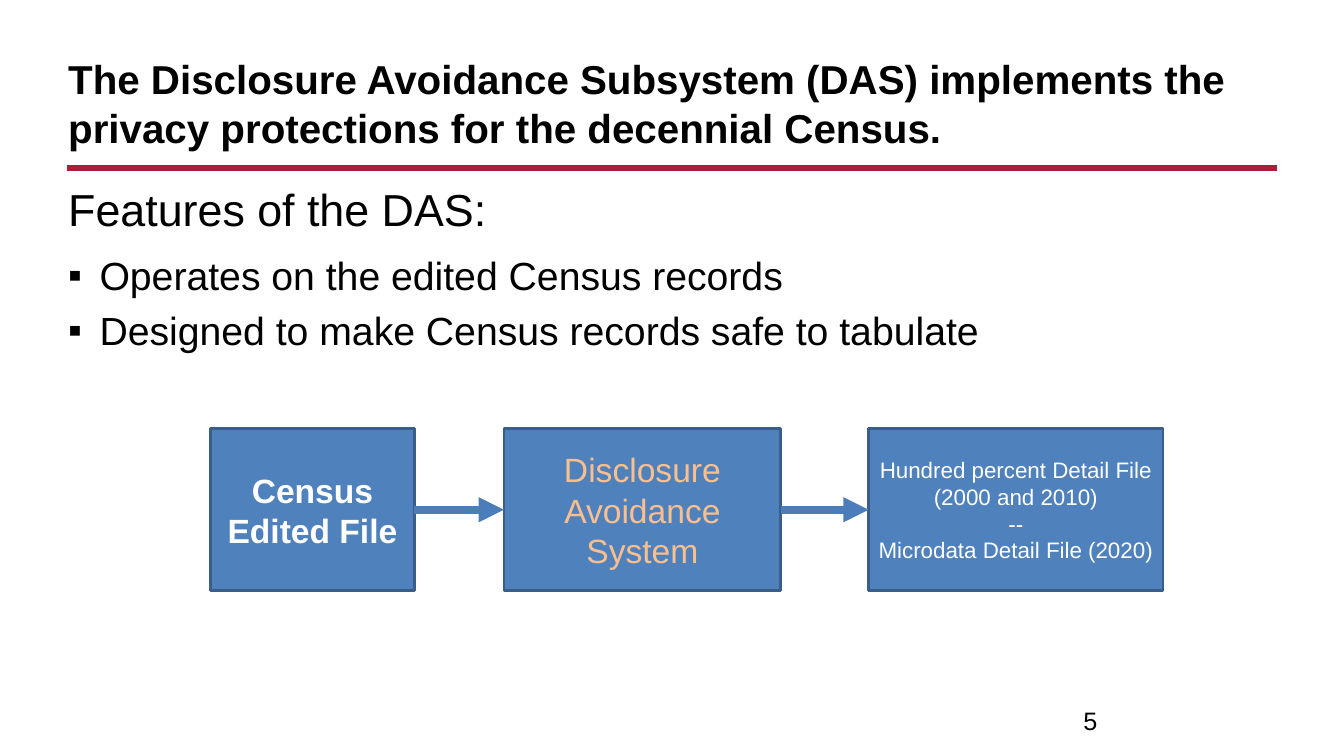
from lxml import etree
from pptx import Presentation
from pptx.dml.color import RGBColor
from pptx.enum.shapes import MSO_CONNECTOR, MSO_SHAPE
from pptx.enum.text import MSO_ANCHOR, PP_ALIGN
from pptx.oxml.ns import qn
from pptx.util import Cm, Pt

BLACK = RGBColor(0x00, 0x00, 0x00)
WHITE = RGBColor(0xFF, 0xFF, 0xFF)
PEACH = RGBColor(0xFA, 0xBF, 0x8E)
CRIMSON = RGBColor(0xA9, 0x20, 0x3D)
BOX_BLUE = RGBColor(0x4F, 0x81, 0xBD)
BORDER_BLUE = RGBColor(0x39, 0x5E, 0x89)
ARROW_BLUE = RGBColor(0x4A, 0x7D, 0xBA)
STRAIGHT = MSO_CONNECTOR.STRAIGHT
RECTANGLE = MSO_SHAPE.RECTANGLE
TOP, MIDDLE, BOTTOM = MSO_ANCHOR.TOP, MSO_ANCHOR.MIDDLE, MSO_ANCHOR.BOTTOM
CENTER = PP_ALIGN.CENTER
RIGHT_SIDE, LEFT_SIDE = 3, 1
FONT = "Arial"

FEATURES = [
    ("Operates on the edited Census records", 11.6),
    ("Designed to make Census records safe to tabulate", 5.6),
]
STAGES = [
    (0, 5.13, "Census Edited File", 24, WHITE, True),
    (7.39, 6.98, "Disclosure Avoidance System", 24, PEACH, False),
    (16.58, 7.42,
     "Hundred percent Detail File\n(2000 and 2010)\n--\nMicrodata Detail File (2020)",
     16, WHITE, False),
]


def style_font(font, size, color=BLACK, bold=False):
    """Set typeface, size, colour and weight of a font."""
    font.name = FONT
    font.size = Pt(size)
    font.bold = bold
    font.color.rgb = color


def add_text(slide, left, top, width, height, text, size, bold=False, anchor=TOP):
    """Add a wrapping text box and return its text frame."""
    box = slide.shapes.add_textbox(Cm(left), Cm(top), Cm(width), Cm(height))
    text_frame = box.text_frame
    text_frame.word_wrap = True
    text_frame.vertical_anchor = anchor
    text_frame.text = text
    style_font(text_frame.paragraphs[0].runs[0].font, size, bold=bold)
    return text_frame


def add_line(slide, start, end, color, width):
    """Add a straight line without shadow between two points in centimetres."""
    line = slide.shapes.add_connector(STRAIGHT, *map(Cm, start + end))
    line.line.color.rgb = color
    line.line.width = Pt(width)
    etree.SubElement(line._element.spPr, qn("a:effectLst"))
    return line


def add_header(slide, left, top, width, height):
    """Add the title with the crimson rule below it."""
    add_text(slide, left, top, width, height,
             "The Disclosure Avoidance Subsystem (DAS) implements the "
             "privacy protections for the decennial Census.", 28.8, True, BOTTOM)
    rule_top = top + height + 0.3
    add_line(slide, (left + 0.23, rule_top), (left + width + 0.03, rule_top), CRIMSON, 4.5)


def add_features(slide, left, top, width, height):
    """Add the lead line and its bulleted features."""
    text_frame = add_text(slide, left, top, width, height, "Features of the DAS:", 32)
    for feature, space_before in FEATURES:
        paragraph = text_frame.add_paragraph()
        paragraph.text = feature
        paragraph.level = 1
        paragraph.space_before = Pt(space_before)
        properties = paragraph._p.get_or_add_pPr()
        properties.set("marL", str(Cm(0.79)))
        properties.set("indent", str(-Cm(0.79)))
        etree.SubElement(properties, qn("a:buFont"), typeface=FONT)
        etree.SubElement(properties, qn("a:buChar"), char="▪")
        style_font(paragraph.runs[0].font, 28)


def add_stage(slide, left, top, width, height, text, size, color, bold):
    """Add one box of the flow."""
    box = slide.shapes.add_shape(RECTANGLE, Cm(left), Cm(top), Cm(width), Cm(height))
    box.shadow.inherit = False
    box.fill.solid()
    box.fill.fore_color.rgb = BOX_BLUE
    box.line.color.rgb = BORDER_BLUE
    box.line.width = Pt(2)
    text_frame = box.text_frame
    text_frame.word_wrap = True
    text_frame.vertical_anchor = MIDDLE
    text_frame.text = text
    for paragraph in text_frame.paragraphs:
        paragraph.alignment = CENTER
        style_font(paragraph.runs[0].font, size, color, bold)
    return box


def add_flow(slide, left, top, height):
    """Add the stages in a row and join neighbours with arrows."""
    boxes = [add_stage(slide, left + offset, top, width, height, *label)
             for offset, width, *label in STAGES]
    for source, target in zip(boxes, boxes[1:]):
        arrow = add_line(slide, (left, top), (left, top), ARROW_BLUE, 6)
        arrow.begin_connect(source, RIGHT_SIDE)
        arrow.end_connect(target, LEFT_SIDE)
        etree.SubElement(arrow.line._get_or_add_ln(), qn("a:tailEnd"), type="triangle")


def main():
    """Build the slide and save it."""
    presentation = Presentation()
    presentation.slide_width = Cm(33.87)
    presentation.slide_height = Cm(19.05)
    slide = presentation.slides.add_slide(presentation.slide_layouts[6])
    add_header(slide, 1.47, 0.76, 30.68, 3.18)
    add_features(slide, 1.47, 4.45, 30.68, 12.57)
    add_flow(slide, 5.31, 10.8, 4.09)
    add_text(slide, 27.05, 17.65, 5.1, 1.02, "5", 18)
    presentation.save("out.pptx")


if __name__ == "__main__":
    main()
